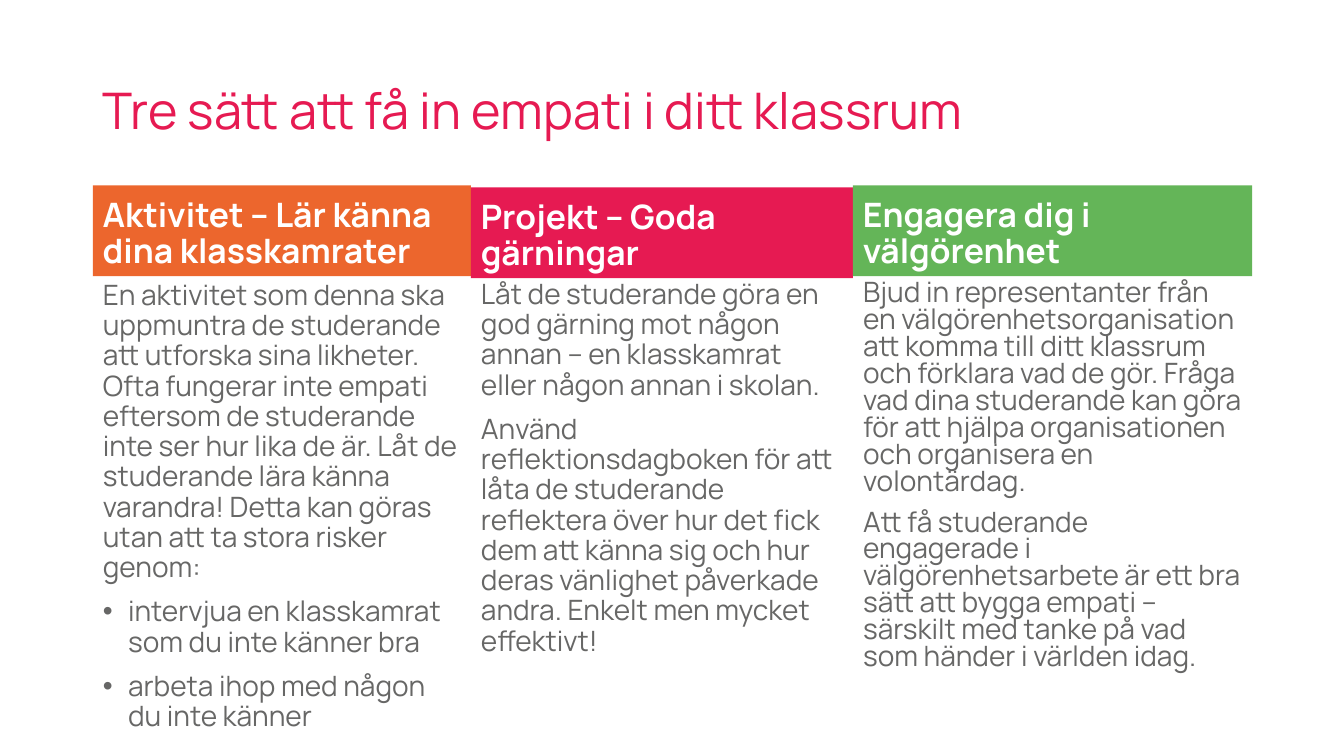
"""Build a slide with three ways to bring empathy into the classroom."""
from lxml.etree import SubElement
from pptx import Presentation
from pptx.dml.color import RGBColor
from pptx.enum.shapes import MSO_SHAPE
from pptx.enum.text import MSO_ANCHOR, MSO_AUTO_SIZE, PP_ALIGN
from pptx.oxml.ns import qn
from pptx.util import Inches, Pt

ORANGE = RGBColor(0xEC, 0x66, 0x2D)
PINK = RGBColor(0xE6, 0x1A, 0x52)
GREEN = RGBColor(0x64, 0xB5, 0x58)
GREY = RGBColor(0x67, 0x67, 0x66)
WHITE = RGBColor(0xFF, 0xFF, 0xFF)

TITLE = "Tre sätt att få in empati i ditt klassrum"
COLUMNS = [
    {
        "heading": "Aktivitet – Lär känna dina klasskamrater",
        "color": ORANGE, "width": 3.75, "body_width": 3.75,
        "top": 1.84, "body_top": 2.74, "spacing": 0.9, "placeholder": 2,
        "text": [
            "En aktivitet som denna ska uppmuntra de studerande att utforska sina "
            "likheter. Ofta fungerar inte empati eftersom de studerande inte ser hur "
            "lika de är. Låt de studerande lära känna varandra! Detta kan göras utan "
            "att ta stora risker genom:",
        ],
        "bullets": [
            "intervjua en klasskamrat som du inte känner bra",
            "arbeta ihop med någon du inte känner",
        ],
    },
    {
        "heading": "Projekt – Goda gärningar",
        "color": PINK, "width": 3.79, "body_width": 3.75,
        "top": 1.86, "body_top": 2.73, "spacing": 0.9, "placeholder": 4,
        "text": [
            "Låt de studerande göra en god gärning mot någon annan – en klasskamrat "
            "eller någon annan i skolan.",
            "Använd reflektionsdagboken för att låta de studerande reflektera över hur "
            "det fick dem att känna sig och hur deras vänlighet påverkade andra. "
            "Enkelt men mycket effektivt!",
        ],
        "bullets": [],
    },
    {
        "heading": "Engagera dig i välgörenhet",
        "color": GREEN, "width": 3.96, "body_width": 3.96,
        "top": 1.84, "body_top": 2.74, "spacing": 0.8, "placeholder": 1,
        "text": [
            "Bjud in representanter från en välgörenhetsorganisation att komma till "
            "ditt klassrum och förklara vad de gör. Fråga vad dina studerande kan göra "
            "för att hjälpa organisationen och organisera en volontärdag.",
            "Att få studerande engagerade i välgörenhetsarbete är ett bra sätt att "
            "bygga empati – särskilt med tanke på vad som händer i världen idag.",
        ],
        "bullets": [],
    },
]
LEFT = 0.92
HEADING_HEIGHT = 0.9
BODY_HEIGHT = 4.03
BULLET_INDENT = 0.25
TITLE_FONT = {"name": "Manrope", "size": Pt(36), "bold": False}
HEADING_FONT = {"name": "Manrope", "size": Pt(24), "bold": True}
BODY_FONT = {"name": "Manrope", "size": Pt(20), "bold": False}


def place(shape, left, top, width, height):
    """Set the position and size of a shape in inches."""
    box = {"left": left, "top": top, "width": width, "height": height}
    for name, value in box.items():
        setattr(shape, name, Inches(value))


def set_bullet(paragraph, bulleted):
    """Give a paragraph a hanging bullet, or none."""
    properties = paragraph._p.get_or_add_pPr()
    indent = Inches(BULLET_INDENT) if bulleted else 0
    properties.set("marL", str(indent))
    properties.set("indent", str(-indent))
    if bulleted:
        SubElement(properties, qn("a:buFont")).set("typeface", "Arial")
        SubElement(properties, qn("a:buChar")).set("char", "•")
    else:
        SubElement(properties, qn("a:buNone"))


def write(shape, texts, bullets, font, color, anchor, spacing):
    """Fill a shape with formatted paragraphs."""
    frame = shape.text_frame
    frame.word_wrap = True
    frame.auto_size = MSO_AUTO_SIZE.NONE
    frame.vertical_anchor = anchor
    for index, text in enumerate(texts + bullets):
        paragraph = frame.paragraphs[0] if index == 0 else frame.add_paragraph()
        set_bullet(paragraph, index >= len(texts))
        paragraph.text = text
        paragraph.alignment = PP_ALIGN.LEFT
        paragraph.line_spacing = spacing
        paragraph.space_before = Pt(10 if index else 0)
        for name, value in font.items():
            setattr(paragraph.font, name, value)
        paragraph.font.color.rgb = color


def main():
    """Build and save the slide."""
    presentation = Presentation()
    presentation.slide_width = Inches(13.33)
    presentation.slide_height = Inches(7.5)
    slide = presentation.slides.add_slide(presentation.slide_layouts[4])
    placeholders = {shape.placeholder_format.idx: shape for shape in slide.placeholders}

    title = slide.shapes.title
    place(title, LEFT, 0.4, 9.35, 1.45)
    write(title, [TITLE], [], TITLE_FONT, PINK, MSO_ANCHOR.MIDDLE, 0.9)

    left = LEFT
    for column in COLUMNS:
        body = placeholders[column["placeholder"]]
        place(body, left, column["body_top"], column["body_width"], BODY_HEIGHT)
        write(body, column["text"], column["bullets"], BODY_FONT, GREY,
              MSO_ANCHOR.TOP, column["spacing"])

        heading = slide.shapes.add_shape(MSO_SHAPE.RECTANGLE, 0, 0, 0, 0)
        place(heading, left, column["top"], column["width"], HEADING_HEIGHT)
        heading.shadow.inherit = False
        heading.fill.solid()
        heading.fill.fore_color.rgb = column["color"]
        heading.line.fill.background()
        write(heading, [column["heading"]], [], HEADING_FONT, WHITE,
              MSO_ANCHOR.BOTTOM, 0.9)
        left += column["width"]

    unused = placeholders[3].element
    unused.getparent().remove(unused)
    presentation.save("out.pptx")


if __name__ == "__main__":
    main()
